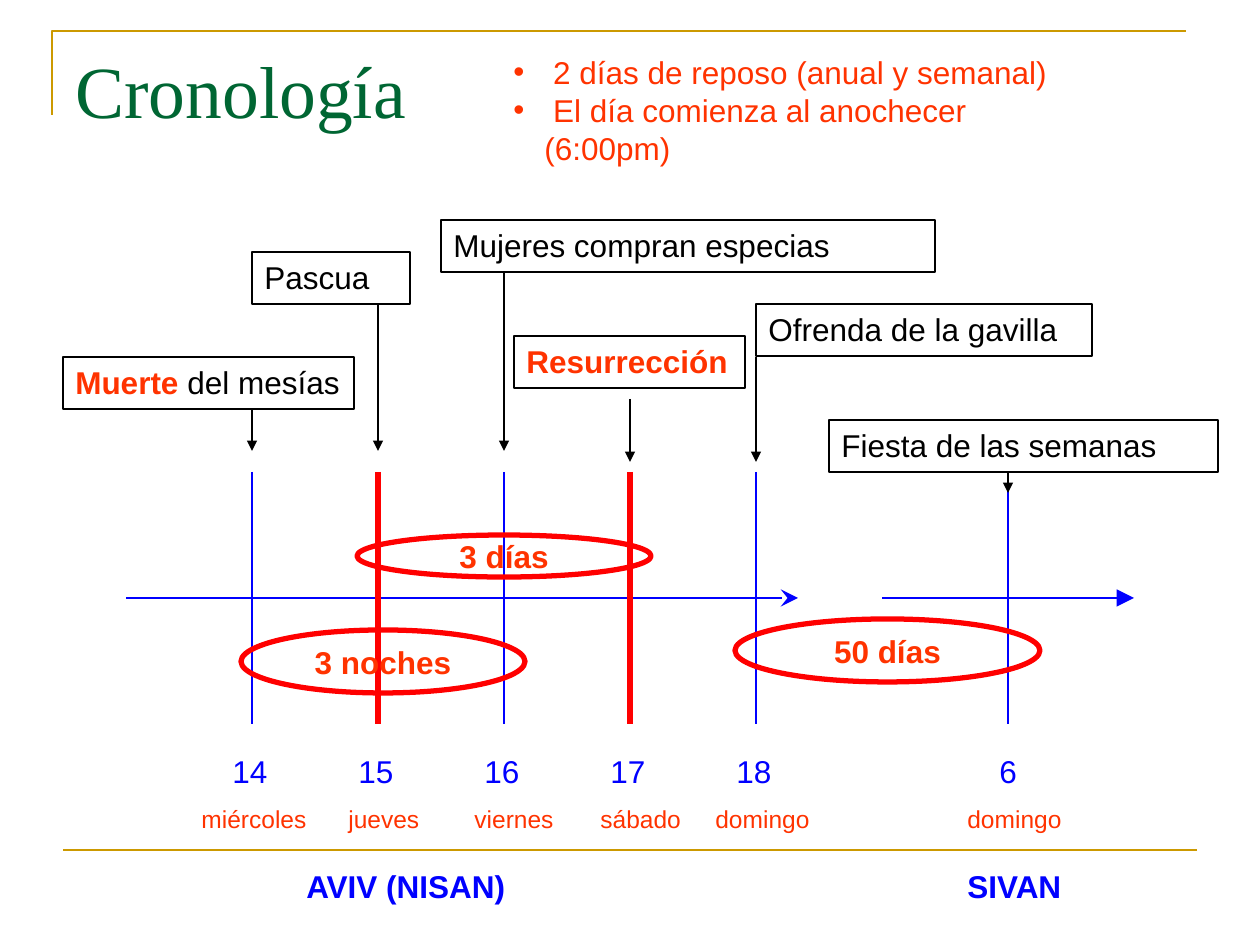
from dataclasses import dataclass

from lxml import etree
from pptx import Presentation
from pptx.dml.color import RGBColor
from pptx.enum.shapes import MSO_CONNECTOR, MSO_SHAPE
from pptx.enum.text import MSO_ANCHOR, MSO_AUTO_SIZE, PP_ALIGN
from pptx.oxml.ns import qn
from pptx.util import Emu, Pt

EMU_PER_PX = 914400 / 126
STRAIGHT = MSO_CONNECTOR.STRAIGHT
RECTANGLE, OVAL = MSO_SHAPE.RECTANGLE, MSO_SHAPE.OVAL
TOP, MIDDLE = MSO_ANCHOR.TOP, MSO_ANCHOR.MIDDLE
LEFT, CENTER = PP_ALIGN.LEFT, PP_ALIGN.CENTER
GROW, FIXED = MSO_AUTO_SIZE.SHAPE_TO_FIT_TEXT, MSO_AUTO_SIZE.NONE

GOLD, GREEN, BLUE = "CC9900", "006633", "0000FF"
RED, ORANGE, BLACK = "FF0000", "FF3300", "000000"
DAY_TOP, DAY_BOTTOM, AXIS_Y = 472, 724, 598


@dataclass
class Span:
    text: str
    color: str = BLACK
    size: int = 18
    bold: bool = False
    font: str = "Arial"


@dataclass
class Box:
    left: int
    top: int
    width: int
    height: int


@dataclass
class Day:
    x: int
    number: str
    number_left: int
    number_width: int
    weekday: str
    weekday_left: int
    weekday_width: int
    key: bool = False


@dataclass
class Callout:
    left: int
    top: int
    width: int
    spans: list[Span]
    arrow_x: int
    arrow_top: int
    arrow_bottom: int
    wrap: bool = True


@dataclass
class Period:
    box: Box
    text: str


DAYS = [
    Day(252, "14", 220, 60, "miércoles", 189, 132),
    Day(378, "15", 346, 60, "jueves", 336, 98, key=True),
    Day(504, "16", 472, 60, "viernes", 462, 107),
    Day(630, "17", 598, 60, "sábado", 588, 108, key=True),
    Day(756, "18", 724, 60, "domingo", 703, 124),
    Day(1008, "6", 987, 43, "domingo", 955, 124),
]
CALLOUTS = [
    Callout(63, 357, 291, [Span("Muerte", ORANGE, bold=True), Span(" del mesías")],
            252, 409, 451, wrap=False),
    Callout(252, 252, 158, [Span("Pascua")], 378, 304, 451),
    Callout(441, 220, 494, [Span("Mujeres compran especias")], 504, 273, 451),
    Callout(514, 336, 231, [Span("Resurrección", ORANGE, bold=True)], 630, 399, 462),
    Callout(756, 304, 336, [Span("Ofrenda de la gavilla")], 756, 357, 462),
    Callout(829, 420, 389, [Span("Fiesta de las semanas")], 1008, 472, 493),
]
PERIODS = [
    Period(Box(357, 535, 294, 42), "3 días"),
    Period(Box(241, 630, 284, 63), "3 noches"),
    Period(Box(735, 619, 305, 63), "50 días"),
]
NOTES = [" 2 días de reposo (anual y semanal)", " El día comienza al anochecer (6:00pm)"]


def px(value: float) -> Emu:
    return Emu(round(value * EMU_PER_PX))


def rgb(color: str) -> RGBColor:
    return RGBColor.from_string(color)


def place(box: Box) -> tuple[Emu, Emu, Emu, Emu]:
    return px(box.left), px(box.top), px(box.width), px(box.height)


def add_spans(para, spans: list[Span]) -> None:
    for span in spans:
        run = para.add_run()
        run.text = span.text
        run.font.name = span.font
        run.font.size = Pt(span.size)
        run.font.bold = span.bold
        run.font.color.rgb = rgb(span.color)


def fill_frame(frame, spans: list[Span], wrap=False, auto_size=GROW, anchor=TOP, align=LEFT) -> None:
    frame.word_wrap = wrap
    frame.auto_size = auto_size
    frame.vertical_anchor = anchor
    para = frame.paragraphs[0]
    para.alignment = align
    add_spans(para, spans)


def draw_text(slide, box: Box, spans: list[Span], wrap: bool = False):
    text_box = slide.shapes.add_textbox(*place(box))
    fill_frame(text_box.text_frame, spans, wrap)
    return text_box.text_frame


def outline(shape, color: str, weight: float) -> None:
    shape.shadow.inherit = False
    shape.fill.background()
    shape.line.color.rgb = rgb(color)
    shape.line.width = Pt(weight)


def draw_line(slide, start: tuple[int, int], end: tuple[int, int], color: str,
              weight: float = 0.75, arrowhead: str = "", head_size: str = "med") -> None:
    line = slide.shapes.add_connector(STRAIGHT, *map(px, start + end))
    line.line.color.rgb = rgb(color)
    line.line.width = Pt(weight)
    properties = line.element.spPr
    if arrowhead:
        etree.SubElement(properties.find(qn("a:ln")), qn("a:tailEnd"),
                         type=arrowhead, w=head_size, len=head_size)
    etree.SubElement(properties, qn("a:effectLst"))


def draw_frame(slide) -> None:
    builder = slide.shapes.build_freeform(52, 115, scale=EMU_PER_PX)
    builder.add_line_segments([(52, 31), (1186, 31)], close=False)
    outline(builder.convert_to_shape(), GOLD, 1.5)
    draw_line(slide, (63, 850), (1197, 850), GOLD, 1.5)


def draw_day(slide, day: Day) -> None:
    color, weight = (RED, 3) if day.key else (BLUE, 0.75)
    draw_line(slide, (day.x, DAY_TOP), (day.x, DAY_BOTTOM), color, weight)
    draw_text(slide, Box(day.number_left, 746, day.number_width, 50), [Span(day.number, BLUE)])
    draw_text(slide, Box(day.weekday_left, 798, day.weekday_width, 42),
              [Span(day.weekday, ORANGE, 14)])


def draw_callout(slide, callout: Callout) -> None:
    box = Box(callout.left, callout.top, callout.width, 52)
    shape = slide.shapes.add_shape(RECTANGLE, *place(box))
    outline(shape, BLACK, 0.75)
    fill_frame(shape.text_frame, callout.spans, callout.wrap)
    draw_line(slide, (callout.arrow_x, callout.arrow_top),
              (callout.arrow_x, callout.arrow_bottom), BLACK, arrowhead="triangle")


def draw_period(slide, period: Period) -> None:
    shape = slide.shapes.add_shape(OVAL, *place(period.box))
    outline(shape, RED, 3)
    fill_frame(shape.text_frame, [Span(period.text, ORANGE, bold=True)],
               auto_size=FIXED, anchor=MIDDLE, align=CENTER)


def draw_notes(slide) -> None:
    frame = draw_text(slide, Box(501, 47, 592, 88), [Span(NOTES[0], ORANGE)], wrap=True)
    add_spans(frame.add_paragraph(), [Span(NOTES[1], ORANGE)])
    for para in frame.paragraphs:
        properties = para._p.get_or_add_pPr()
        properties.set("marL", str(px(31)))
        properties.set("indent", str(-px(31)))
        etree.SubElement(properties, qn("a:buFont"), typeface="Arial")
        etree.SubElement(properties, qn("a:buChar"), char="•")


def main() -> None:
    deck = Presentation()
    deck.slide_width, deck.slide_height = px(1260), px(945)
    slide = deck.slides.add_slide(deck.slide_layouts[6])
    draw_frame(slide)
    title = draw_text(slide, Box(63, 38, 1134, 158),
                      [Span("Cronología", GREEN, 42, font="Times New Roman")], wrap=True)
    title.auto_size = FIXED
    title.margin_top = px(7)
    draw_line(slide, (126, AXIS_Y), (798, AXIS_Y), BLUE, arrowhead="stealth", head_size="lg")
    draw_line(slide, (882, AXIS_Y), (1134, AXIS_Y), BLUE, arrowhead="triangle", head_size="lg")
    for day in DAYS:
        draw_day(slide, day)
    draw_text(slide, Box(294, 861, 242, 50), [Span("AVIV (NISAN)", BLUE, bold=True)], wrap=True)
    draw_text(slide, Box(955, 861, 124, 50), [Span("SIVAN", BLUE, bold=True)])
    for callout in CALLOUTS:
        draw_callout(slide, callout)
    for period in PERIODS:
        draw_period(slide, period)
    draw_notes(slide)
    deck.save("out.pptx")


if __name__ == "__main__":
    main()
